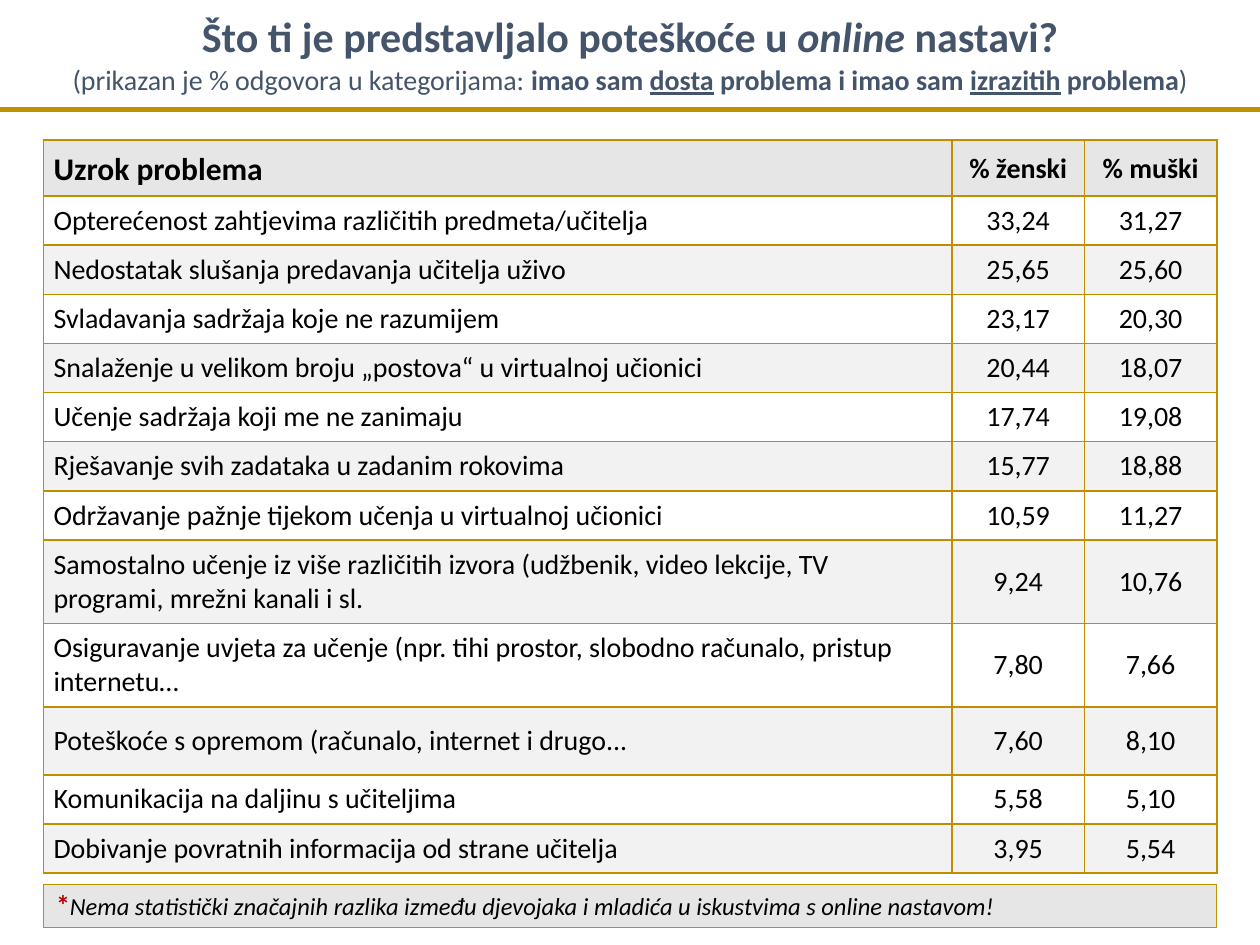
import dataclasses

import pptx
import pptx.dml.color
import pptx.enum.shapes
import pptx.enum.text
import pptx.oxml
import pptx.oxml.ns
import pptx.util

Cm = pptx.util.Cm
Pt = pptx.util.Pt
ALIGN = pptx.enum.text.PP_ALIGN
MIDDLE = pptx.enum.text.MSO_ANCHOR.MIDDLE

BLACK, SLATE, RED = "000000", "44546A", "C00000"
GOLD, EDGE = "BF9000", "BF8F00"
GREY, PALE = "E7E6E6", "F2F2F2"

LEFT, WIDTH = 0.88, 23.65
LOW, MID, TALL = 0.98, 1.37, 1.65


@dataclasses.dataclass
class Run:
    text: str
    size: float = 16
    color: str = BLACK
    bold: bool = False
    italic: bool = False
    underline: bool = False


@dataclasses.dataclass
class Cause:
    text: str
    women: str
    men: str
    height: float = LOW


TITLE = [
    Run("Što ti je predstavljalo poteškoće u ", 24, SLATE, True),
    Run("online", 24, SLATE, True, True),
    Run(" nastavi?", 24, SLATE, True),
]
HINT = [
    Run("(prikazan je % odgovora u kategorijama: ", 16, SLATE),
    Run("imao sam ", 16, SLATE, True),
    Run("dosta", 16, SLATE, True, underline=True),
    Run(" problema i imao sam ", 16, SLATE, True),
    Run("izrazitih", 16, SLATE, True, underline=True),
    Run(" problema", 16, SLATE, True),
    Run(")", 16, SLATE),
]
NOTE = [
    Run("*", 16, RED, True),
    Run("Nema statistički značajnih razlika između djevojaka i mladića "
        "u iskustvima s online nastavom!", 14, italic=True),
]
HEAD = Cause("Uzrok problema", "% ženski", "% muški", 1.11)
CAUSES = [
    Cause("Opterećenost zahtjevima različitih predmeta/učitelja", "33,24", "31,27"),
    Cause("Nedostatak slušanja predavanja učitelja uživo", "25,65", "25,60"),
    Cause("Svladavanja sadržaja koje ne razumijem", "23,17", "20,30"),
    Cause("Snalaženje u velikom broju „postova“ u virtualnoj učionici", "20,44", "18,07"),
    Cause("Učenje sadržaja koji me ne zanimaju", "17,74", "19,08"),
    Cause("Rješavanje svih zadataka u zadanim rokovima", "15,77", "18,88"),
    Cause("Održavanje pažnje tijekom učenja u virtualnoj učionici", "10,59", "11,27"),
    Cause("Samostalno učenje iz više različitih izvora (udžbenik, video lekcije, TV "
          "programi, mrežni kanali i sl.", "9,24", "10,76", TALL),
    Cause("Osiguravanje uvjeta za učenje (npr. tihi prostor, slobodno računalo, pristup "
          "internetu…", "7,80", "7,66", TALL),
    Cause("Poteškoće s opremom (računalo, internet i drugo...", "7,60", "8,10", MID),
    Cause("Komunikacija na daljinu s učiteljima", "5,58", "5,10"),
    Cause("Dobivanje povratnih informacija od strane učitelja", "3,95", "5,54"),
]


def paint(target, color: str) -> None:
    """Give a fill or line fill one solid colour."""
    target.solid()
    target.fore_color.rgb = pptx.dml.color.RGBColor.from_string(color)


def write(para, runs: list[Run], align=ALIGN.LEFT, space: float = 1.0) -> None:
    look = {"alignment": align, "line_spacing": space,
            "space_before": Pt(0), "space_after": Pt(0)}
    for name, value in look.items():
        setattr(para, name, value)
    for run in runs:
        part = para.add_run()
        part.text = run.text
        look = {"name": "Calibri", "size": Pt(run.size), "bold": run.bold,
                "italic": run.italic, "underline": run.underline}
        for name, value in look.items():
            setattr(part.font, name, value)
        paint(part.font.fill, run.color)


def border(cell, color: str, width: float) -> None:
    props = cell._tc.get_or_add_tcPr()
    for side in "LRTB":
        props.append(pptx.oxml.parse_xml(
            f'<a:ln{side} {pptx.oxml.ns.nsdecls("a")} w="{Pt(width)}">'
            f'<a:solidFill><a:srgbClr val="{color}"/></a:solidFill></a:ln{side}>'))


def draw_title(slide) -> None:
    title = slide.shapes.title
    place = {"left": Cm(0), "top": Cm(0), "width": Cm(25.4), "height": Cm(2.08)}
    for name, value in place.items():
        setattr(title, name, value)
    frame = title.text_frame
    frame.auto_size = pptx.enum.text.MSO_AUTO_SIZE.NONE
    frame.vertical_anchor = MIDDLE
    write(frame.paragraphs[0], TITLE, ALIGN.CENTER, 1.07)
    write(frame.add_paragraph(), HINT, ALIGN.CENTER, 1.07)


def draw_rule(slide) -> None:
    rule = slide.shapes.add_connector(
        pptx.enum.shapes.MSO_CONNECTOR.STRAIGHT, Cm(0), Cm(2.21), Cm(25.4), Cm(2.21))
    paint(rule.line.fill, GOLD)
    rule.line.width = Pt(3)
    rule._element.spPr.append(
        pptx.oxml.parse_xml(f'<a:effectLst {pptx.oxml.ns.nsdecls("a")}/>'))


def draw_table(slide) -> None:
    rows = [HEAD, *CAUSES]
    high = sum(row.height for row in rows)
    table = slide.shapes.add_table(
        len(rows), 3, Cm(LEFT), Cm(2.82), Cm(WIDTH), Cm(high)).table
    table.first_row = table.horz_banding = False
    for col, width in zip(table.columns, (18.31, 2.67, 2.67)):
        col.width = Cm(width)
    inset = {"margin_left": Cm(0.2), "margin_right": Cm(0.2),
             "margin_top": Cm(0.15), "margin_bottom": Cm(0.15),
             "vertical_anchor": MIDDLE}
    for i, row in enumerate(rows):
        table.rows[i].height = Cm(row.height)
        top = i == 0
        for j, text in enumerate((row.text, row.women, row.men)):
            cell = table.cell(i, j)
            for name, value in inset.items():
                setattr(cell, name, value)
            border(cell, EDGE, 1)
            if i % 2:
                cell.fill.background()
            else:
                paint(cell.fill, GREY if top else PALE)
            size = 18 if top and j == 0 else 16
            write(cell.text_frame.paragraphs[0], [Run(text, size, bold=top)],
                  ALIGN.CENTER if j else ALIGN.LEFT, 1.07 if top else 1.0)


def draw_note(slide) -> None:
    box = slide.shapes.add_shape(
        pptx.enum.shapes.MSO_SHAPE.RECTANGLE, Cm(LEFT), Cm(17.83), Cm(WIDTH), Cm(0.87))
    box.shadow.inherit = False
    paint(box.fill, GREY)
    paint(box.line.fill, GOLD)
    box.line.width = Pt(0.75)
    frame = box.text_frame
    frame.word_wrap = True
    frame.vertical_anchor = MIDDLE
    para = frame.paragraphs[0]
    write(para, NOTE, space=0.9)
    # Hanging indent for the asterisk
    props = para._p.get_or_add_pPr()
    for name, value in {"marL": Cm(0.25), "indent": -Cm(0.25)}.items():
        props.set(name, str(value))


def main() -> None:
    deck = pptx.Presentation()
    deck.slide_width, deck.slide_height = Cm(25.4), Cm(19.05)
    slide = deck.slides.add_slide(deck.slide_layouts[5])
    for draw in (draw_title, draw_rule, draw_table, draw_note):
        draw(slide)
    deck.save("out.pptx")


if __name__ == "__main__":
    main()
